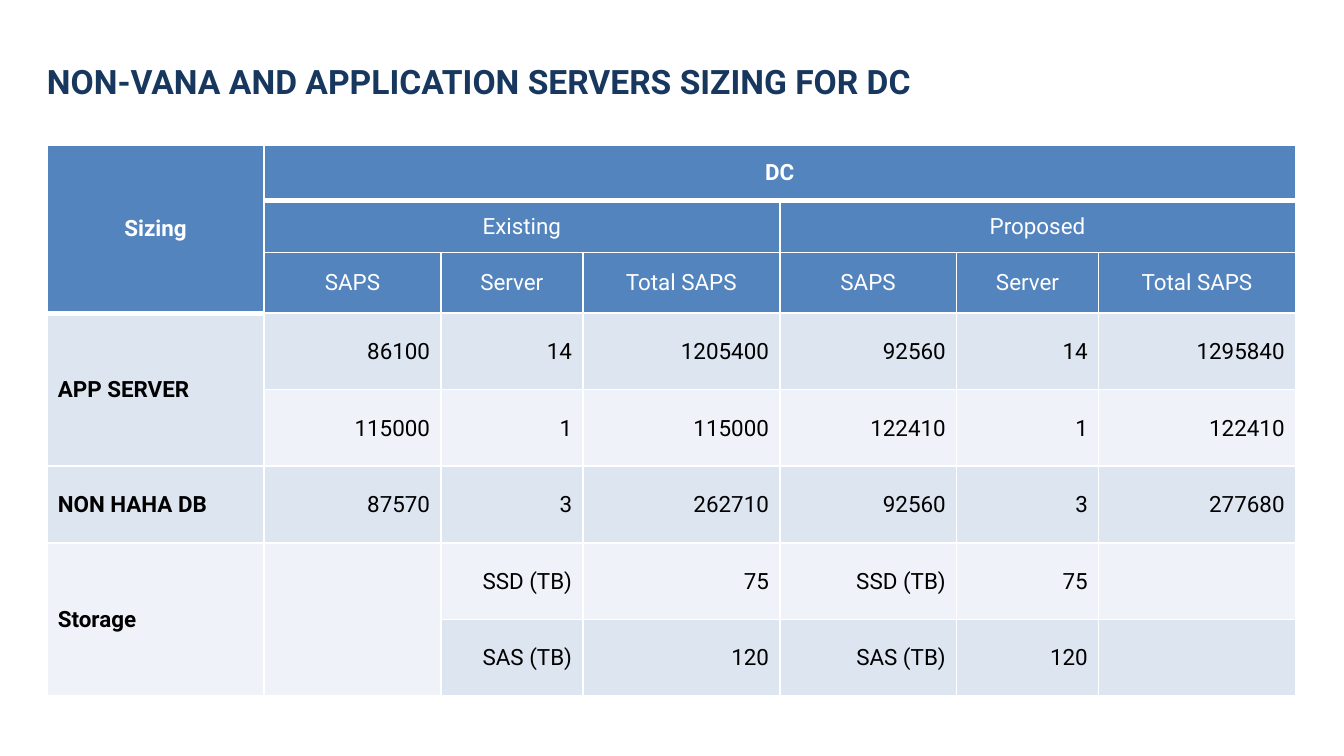
import pptx
import pptx.util
import pptx.dml.color
import pptx.enum.text
import pptx.oxml
import pptx.oxml.ns

Inches = pptx.util.Inches
Pt = pptx.util.Pt
RGBColor = pptx.dml.color.RGBColor
PP_ALIGN = pptx.enum.text.PP_ALIGN
MIDDLE = pptx.enum.text.MSO_ANCHOR.MIDDLE

NAVY = RGBColor(0x17, 0x37, 0x5E)
BLUE = RGBColor(0x53, 0x84, 0xBE)
PALE_BLUE = RGBColor(0xDD, 0xE5, 0xF0)
PALE_GREY = RGBColor(0xEF, 0xF2, 0xF8)
WHITE = RGBColor(0xFF, 0xFF, 0xFF)
BLACK = RGBColor(0x00, 0x00, 0x00)

FONT = "Roboto"
HEADER_ROWS = 3
COLUMN_SHARES = [1.62] + [1.32, 1.06, 1.47] * 2
ROW_SHARES = [0.41, 0.39, 0.45] + [0.57] * 5
ROW_FILLS = [BLUE] * HEADER_ROWS + [PALE_BLUE, PALE_GREY] * 2 + [PALE_BLUE]
MERGES = [
    ((0, 0), (2, 0)),
    ((0, 1), (0, 6)),
    ((1, 1), (1, 3)),
    ((1, 4), (1, 6)),
    ((3, 0), (4, 0)),
    ((6, 0), (7, 0)),
    ((6, 1), (7, 1)),
]
SIZING = [
    ["Sizing", "DC", "", "", "", "", ""],
    ["", "Existing", "", "", "Proposed", "", ""],
    [""] + ["SAPS", "Server", "Total SAPS"] * 2,
    ["APP SERVER", "86100", "14", "1205400", "92560", "14", "1295840"],
    ["", "115000", "1", "115000", "122410", "1", "122410"],
    ["NON HAHA DB", "87570", "3", "262710", "92560", "3", "277680"],
    ["Storage", "", "SSD (TB)", "75", "SSD (TB)", "75", ""],
    ["", "", "SAS (TB)", "120", "SAS (TB)", "120", ""],
]


def set_attributes(target, values):
    for name, value in values.items():
        setattr(target, name, value)


def add_text(p, text, size, color, bold):
    r = p.add_run()
    r.text = text
    set_attributes(r.font, {"name": FONT, "size": Pt(size), "bold": bold})
    r.font.color.rgb = color


def add_borders(cell, bottom_width):
    tcPr = cell._tc.get_or_add_tcPr()
    for side, width in {"L": 1, "R": 1, "T": 1, "B": bottom_width}.items():
        tcPr.append(pptx.oxml.parse_xml(
            f'<a:ln{side} {pptx.oxml.ns.nsdecls("a")} w="{Pt(width)}">'
            f'<a:solidFill><a:srgbClr val="{WHITE}"/></a:solidFill></a:ln{side}>'
        ))


def add_title(s, left, top, width, height):
    sp = s.shapes.add_textbox(*map(Inches, (left, top, width, height)))
    tf = sp.text_frame
    set_attributes(tf, {
        "word_wrap": True,
        "vertical_anchor": MIDDLE,
        "margin_left": 0,
        "margin_right": Inches(0.1),
        "margin_top": Inches(0.05),
        "margin_bottom": Inches(0.05),
    })
    add_text(tf.paragraphs[0], "NON-VANA AND APPLICATION SERVERS SIZING FOR DC",
             18, NAVY, True)


def format_cell(cell, row, column, text):
    header = row < HEADER_ROWS
    label = column == 0
    add_borders(cell, 3 if row == 0 or (header and label) else 1)
    cell.fill.solid()
    cell.fill.fore_color.rgb = ROW_FILLS[row]
    set_attributes(cell, {
        "vertical_anchor": MIDDLE,
        "margin_left": Inches(0.08),
        "margin_right": Inches(0.08),
        "margin_top": 0 if header or label else Inches(0.01),
        "margin_bottom": 0,
    })
    if text:
        p = cell.text_frame.paragraphs[0]
        if header:
            p.alignment = PP_ALIGN.CENTER
        else:
            p.alignment = PP_ALIGN.LEFT if label else PP_ALIGN.RIGHT
        add_text(p, text, 12, WHITE if header else BLACK, label or row == 0)


def add_sizing_table(s, left, top, width, height):
    frame = s.shapes.add_table(len(ROW_SHARES), len(COLUMN_SHARES),
                               *map(Inches, (left, top, width, height)))
    table = frame.table
    for column, share in zip(table.columns, COLUMN_SHARES):
        column.width = Inches(width * share / sum(COLUMN_SHARES))
    for row, share in zip(table.rows, ROW_SHARES):
        row.height = Inches(height * share / sum(ROW_SHARES))
    for first, last in MERGES:
        table.cell(*first).merge(table.cell(*last))
    for i, texts in enumerate(SIZING):
        for j, text in enumerate(texts):
            format_cell(table.cell(i, j), i, j, text)


def main():
    prs = pptx.Presentation()
    prs.slide_width = Inches(10)
    prs.slide_height = prs.slide_width * 9 // 16
    s = prs.slides.add_slide(prs.slide_layouts[6])
    add_title(s, 0.35, 0.4, 8.24, 0.4)
    add_sizing_table(s, 0.35, 1.08, 9.29, 4.1)
    prs.save("out.pptx")


if __name__ == "__main__":
    main()
